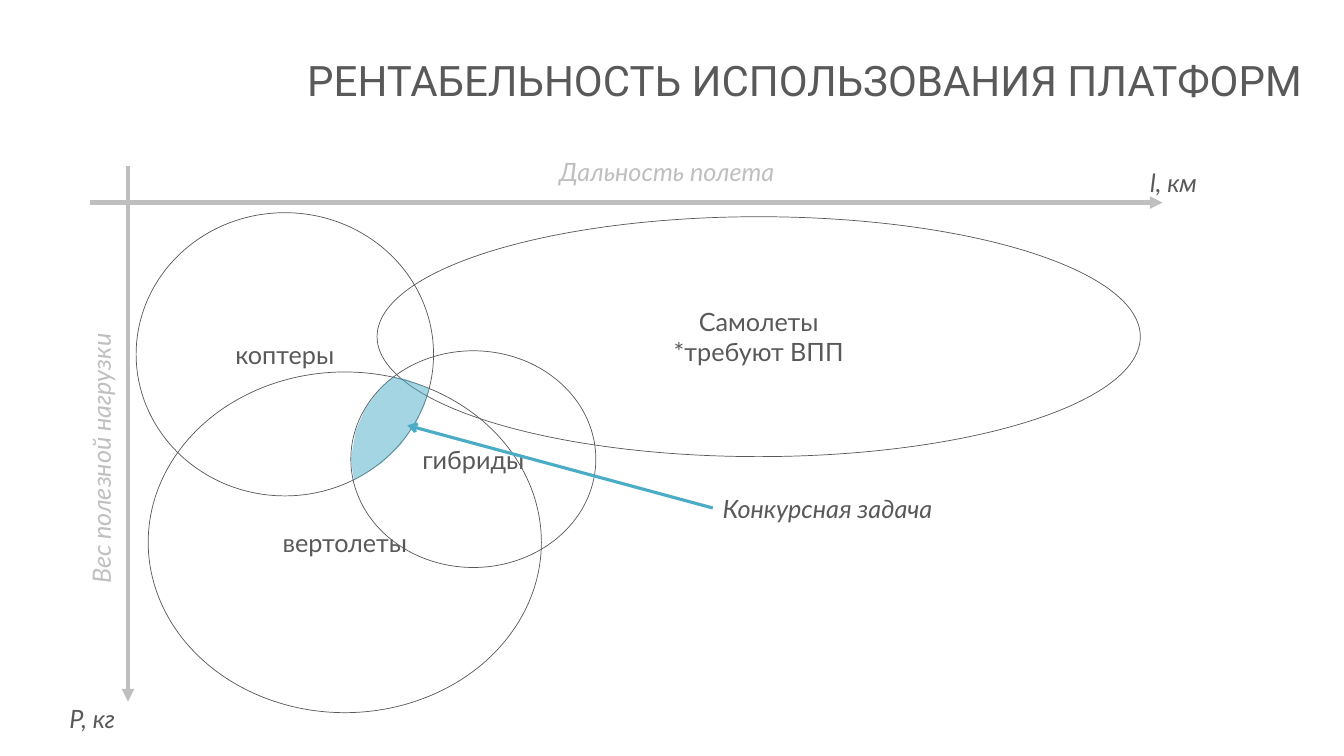
"""Build a slide comparing aircraft platforms by range and payload weight."""
import lxml.etree
import pptx
import pptx.dml.color
import pptx.enum.shapes
import pptx.enum.text
import pptx.oxml.ns
import pptx.util

PX = 9144
DARK = pptx.dml.color.RGBColor(0x59, 0x59, 0x59)
LIGHT = pptx.dml.color.RGBColor(0xBF, 0xBF, 0xBF)
ACCENT = pptx.dml.color.RGBColor(0x4B, 0xAC, 0xC6)
CENTER = pptx.enum.text.PP_ALIGN.CENTER
RIGHT = pptx.enum.text.PP_ALIGN.RIGHT
MIDDLE = pptx.enum.text.MSO_ANCHOR.MIDDLE

PLATFORMS = [
    ("гибриды", 348, 348, 243, 215),
    ("Самолеты\n*требуют ВПП", 374, 215, 757, 238),
    ("вертолеты", 147, 369, 390, 338),
    ("коптеры", 135, 211, 295, 281),
]
LABELS = [
    ("l, км", 1131, 161, 93, DARK, 0),
    ("Дальность полета", 545, 150, 243, LIGHT, 0),
    ("P, кг", 59, 693, 93, DARK, 0),
    ("Вес полезной нагрузки", -86, 383, 372, LIGHT, 270),
]
TASK_AREA = [
    (351, 476), (348, 455), (353, 427), (363, 404), (379, 383),
    (390, 374), (402, 376), (418, 382), (426, 386), (421, 402),
    (413, 419), (397, 442), (379, 459), (361, 471),
]


def box(*lengths):
    """Turn px lengths into EMU."""
    return [pptx.util.Emu(length * PX) for length in lengths]


def add_child(parent, tag, **attributes):
    """Append a DrawingML element."""
    return lxml.etree.SubElement(parent, pptx.oxml.ns.qn(tag), attributes)


def write(tf, text, size=18, color=DARK, font="Lato", italic=False, align=None):
    """Fill a text frame, one paragraph per line of text."""
    tf.word_wrap = True
    tf.text = text
    for p in tf.paragraphs:
        p.alignment = align
        p.font.size = pptx.util.Pt(size)
        p.font.name = font
        p.font.italic = italic
        p.font.color.rgb = color


def add_title(s, text):
    """Place the right-aligned title."""
    title = s.shapes.title
    title.left, title.top, title.width, title.height = box(284, 24, 1018, 110)
    tf = title.text_frame
    write(tf, text, size=30, font="Roboto", align=RIGHT)
    tf.auto_size = pptx.enum.text.MSO_AUTO_SIZE.NONE
    tf.vertical_anchor = MIDDLE


def add_label(s, text, x, y, w, color, rotation=0):
    """Add an italic label."""
    label = s.shapes.add_textbox(*box(x, y, w, 40))
    label.rotation = rotation
    write(label.text_frame, text, color=color, italic=True)
    return label


def add_platform(s, text, x, y, w, h):
    """Add an outlined ellipse for one kind of aircraft."""
    ellipse = s.shapes.add_shape(
        pptx.enum.shapes.MSO_SHAPE.OVAL, *box(x, y, w, h))
    ellipse.shadow.inherit = False
    ellipse.fill.background()
    ellipse.line.color.rgb = DARK
    ellipse.line.width = pptx.util.Pt(0.5)
    ellipse.text_frame.vertical_anchor = MIDDLE
    write(ellipse.text_frame, text, align=CENTER)


def add_arrow(s, x1, y1, x2, y2, color, width, head):
    """Add a straight arrow pointing at its second end."""
    arrow = s.shapes.add_connector(
        pptx.enum.shapes.MSO_CONNECTOR.STRAIGHT, *box(x1, y1, x2, y2))
    arrow.line.color.rgb = color
    arrow.line.width = pptx.util.Pt(width)
    add_child(arrow.line._get_or_add_ln(), "a:tailEnd", type=head)
    add_child(arrow._element.spPr, "a:effectLst")
    return arrow


def add_area(s, points, color, opacity):
    """Add a translucent polygon."""
    builder = s.shapes.build_freeform(*points[0], scale=PX)
    builder.add_line_segments(points[1:], close=True)
    area = builder.convert_to_shape()
    area.shadow.inherit = False
    area.line.fill.background()
    area.fill.solid()
    area.fill.fore_color.rgb = color
    rgb = area._element.spPr.find(".//" + pptx.oxml.ns.qn("a:srgbClr"))
    add_child(rgb, "a:alpha", val=str(opacity * 1000))


def main():
    """Build and save the slide."""
    prs = pptx.Presentation()
    prs.slide_width, prs.slide_height = box(1333, 750)
    s = prs.slides.add_slide(prs.slide_layouts[5])
    add_title(s, "РЕНТАБЕЛЬНОСТЬ ИСПОЛЬЗОВАНИЯ ПЛАТФОРМ")
    add_arrow(s, 89, 201, 1153, 201, LIGHT, 3, "triangle")
    add_arrow(s, 127, 165, 127, 696, LIGHT, 3, "triangle")
    for label in LABELS:
        add_label(s, *label)
    for platform in PLATFORMS:
        add_platform(s, *platform)
    task = add_label(s, "Конкурсная задача", 707, 484, 243, DARK)
    add_area(s, TASK_AREA, ACCENT, 50)
    pointer = add_arrow(s, 707, 504, 404, 422, ACCENT, 2.25, "arrow")
    pointer.begin_connect(task, 1)
    prs.save("out.pptx")


if __name__ == "__main__":
    main()
